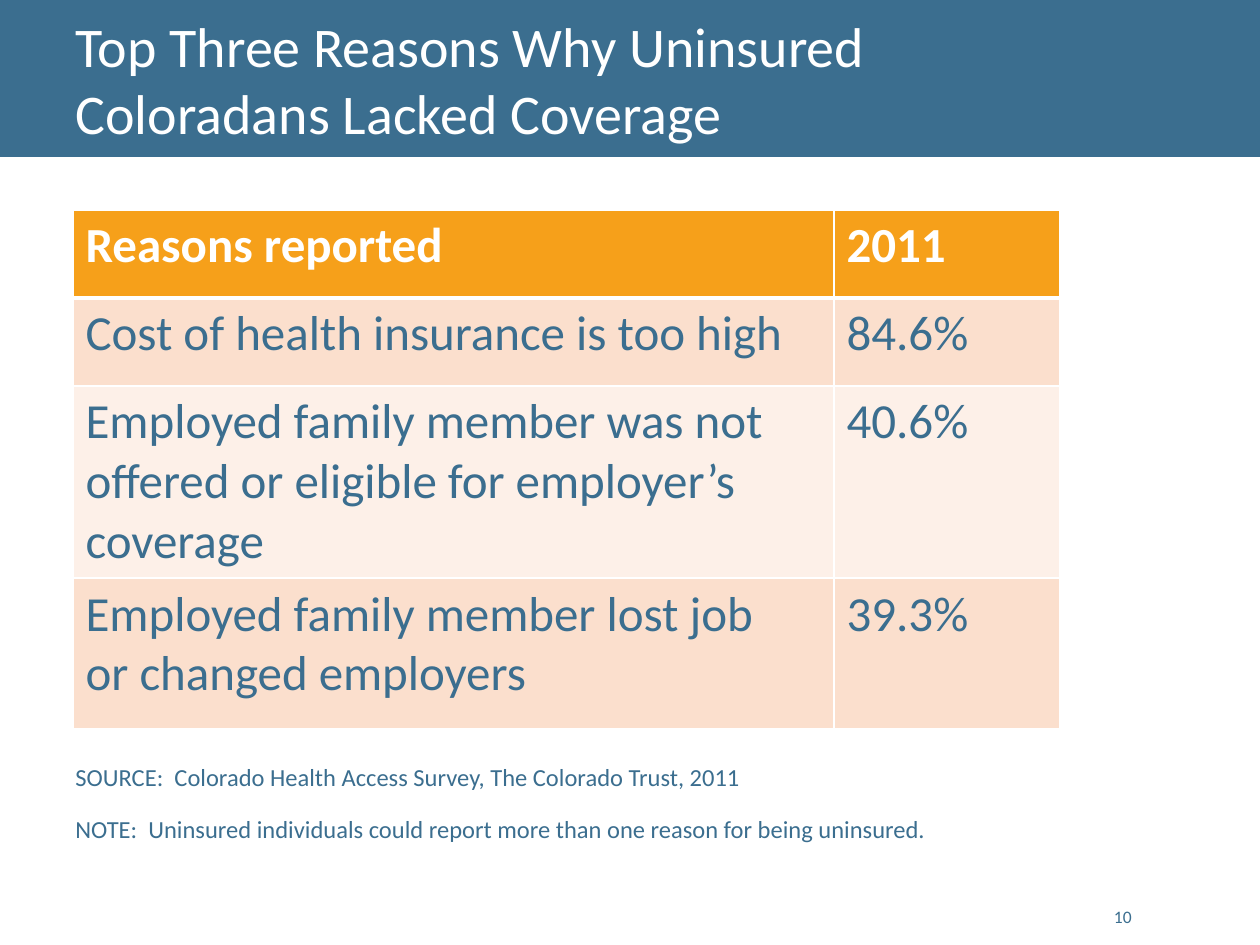
from lxml import etree
from pptx import Presentation
from pptx.dml.color import RGBColor
from pptx.enum.shapes import MSO_SHAPE
from pptx.enum.text import MSO_ANCHOR, PP_ALIGN
from pptx.oxml.ns import qn
from pptx.util import Emu, Pt

RECTANGLE = MSO_SHAPE.RECTANGLE
TOP, MIDDLE, BOTTOM = MSO_ANCHOR.TOP, MSO_ANCHOR.MIDDLE, MSO_ANCHOR.BOTTOM
LEFT, RIGHT = PP_ALIGN.LEFT, PP_ALIGN.RIGHT
TITLE_ONLY = 5
PX_PER_INCH = 126
FONT = "Calibri"
COLORS = {
    "blue": "3B6E8F",
    "white": "FFFFFF",
    "orange": "F6A01A",
    "peach": "FBDFCD",
    "pale": "FDF0E8",
}
REASONS = [
    ("Reasons reported", "2011"),
    ("Cost of health insurance is too high", "84.6%"),
    ("Employed family member was not offered or eligible for employer’s coverage", "40.6%"),
    ("Employed family member lost job\vor changed employers", "39.3%"),
]
COLUMN_WIDTHS = (761, 226)
ROW_HEIGHTS = (88, 88, 178, 151)
NOTES = [
    "SOURCE:  Colorado Health Access Survey, The Colorado Trust, 2011",
    "NOTE:  Uninsured individuals could report more than one reason for being uninsured.",
]


def px(length):
    """Turn pixels into EMU."""
    return Emu(round(length * 914400 / PX_PER_INCH))


def color(name):
    """Look up a named colour."""
    return RGBColor.from_string(COLORS[name])


def write(frame, text, size, ink, bold=False, align=LEFT):
    """Fill a text frame with one formatted paragraph."""
    frame.text = text
    frame.word_wrap = True
    para = frame.paragraphs[0]
    para.alignment = align
    para.font.name = FONT
    para.font.size = Pt(size)
    para.font.bold = bold
    para.font.color.rgb = color(ink)


def add_text(page, box, text, size, anchor=TOP, align=LEFT):
    """Add a blue text box."""
    frame = page.shapes.add_textbox(*map(px, box)).text_frame
    write(frame, text, size, "blue", align=align)
    frame.vertical_anchor = anchor


def add_title(page, box):
    """Draw the title band and set the title on it."""
    left, top, width, height = box
    band = page.shapes.add_shape(RECTANGLE, *map(px, box))
    band.shadow.inherit = False
    band.fill.solid()
    band.fill.fore_color.rgb = color("blue")
    band.line.fill.background()
    title = page.shapes.title
    title._element.addprevious(band._element)
    title.left, title.top = px(left + 63), px(top)
    title.width, title.height = px(width - 126), px(height)
    write(title.text_frame, "Top Three Reasons Why Uninsured\vColoradans Lacked Coverage", 32, "white")
    title.text_frame.vertical_anchor = MIDDLE


def add_borders(cell, widths):
    """Give a cell white borders, in points by side."""
    properties = cell._tc.get_or_add_tcPr()
    for side, width in widths.items():
        line = etree.SubElement(properties, qn(f"a:ln{side}"), w=str(Pt(width)))
        fill = etree.SubElement(line, qn("a:solidFill"))
        etree.SubElement(fill, qn("a:srgbClr"), val=COLORS["white"])


def add_reasons(page, box):
    """Add the table of reasons with a header and banded rows."""
    table = page.shapes.add_table(len(REASONS), len(COLUMN_WIDTHS), *map(px, box)).table
    for column, width in zip(table.columns, COLUMN_WIDTHS):
        column.width = px(width)
    for row, height in zip(table.rows, ROW_HEIGHTS):
        row.height = px(height)
    for index, values in enumerate(REASONS):
        header = index == 0
        shade = "orange" if header else ("pale", "peach")[index % 2]
        borders = {"L": 1, "R": 1, "T": 3 if index == 1 else 1, "B": 3 if header else 1}
        for cell, value in zip(table.rows[index].cells, values):
            add_borders(cell, borders)
            cell.fill.solid()
            cell.fill.fore_color.rgb = color(shade)
            write(cell.text_frame, value, 28, "white" if header else "blue", bold=header)


def add_notes(page, box):
    """Stack the source and note lines."""
    left, top, width, height = box
    for index, note in enumerate(NOTES):
        add_text(page, (left, top + index * 52, width, height), note, 14)


def main():
    """Build and save the deck."""
    deck = Presentation()
    deck.slide_width, deck.slide_height = px(1260), px(945)
    page = deck.slides.add_slide(deck.slide_layouts[TITLE_ONLY])
    add_title(page, (0, 0, 1260, 157))
    add_reasons(page, (73, 210, sum(COLUMN_WIDTHS), sum(ROW_HEIGHTS)))
    add_notes(page, (63, 756, 1081, 43))
    add_text(page, (1094, 883, 50, 50), "10", 10, BOTTOM, RIGHT)
    deck.save("out.pptx")


if __name__ == "__main__":
    main()
